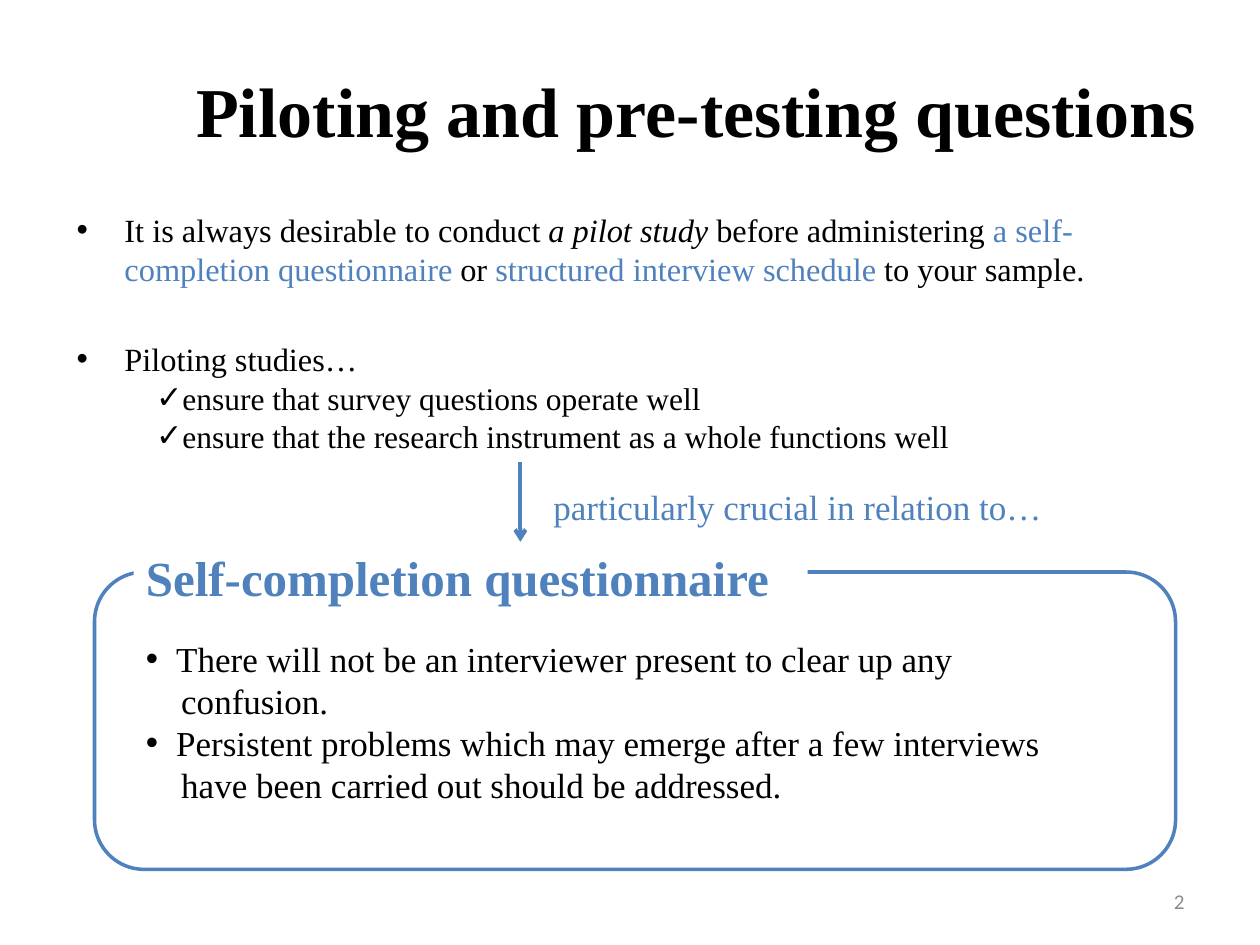
from dataclasses import dataclass

from lxml import etree
from pptx import Presentation
from pptx.dml.color import RGBColor
from pptx.enum import shapes, text
from pptx.oxml import ns
from pptx.util import Inches, Pt

BLACK, BLUE, WHITE, GREY = "000000", "4F81BD", "FFFFFF", "8C8C8C"
SERIF, SANS = "Times New Roman", "Calibri"


@dataclass
class Run:
    words: str
    size: float
    color: str = BLACK
    bold: bool = False
    italic: bool = False
    font: str = SERIF


@dataclass
class Para:
    runs: list[Run]
    bullet: str = ""
    indent: float = 0
    before: float = 0
    align: text.PP_ALIGN = text.PP_ALIGN.LEFT


@dataclass
class Box:
    left: float
    top: float
    width: float
    height: float


def rgb(color: str) -> RGBColor:
    return RGBColor.from_string(color)


def set_bullet(paragraph, para: Para) -> None:
    """Indent the paragraph and hang its bullet, if it has one."""
    props = paragraph._p.get_or_add_pPr()
    props.set("marL", str(Inches(para.indent)))
    props.set("indent", str(-Inches(para.indent) if para.bullet else 0))
    if para.bullet:
        font = etree.SubElement(props, ns.qn("a:buFont"))
        font.set("typeface", "Arial")
        etree.SubElement(props, ns.qn("a:buChar")).set("char", para.bullet)


def write(frame, paras: list[Para], anchor=text.MSO_ANCHOR.TOP) -> None:
    frame.word_wrap = True
    frame.vertical_anchor = anchor
    for index, para in enumerate(paras):
        paragraph = frame.add_paragraph() if index else frame.paragraphs[0]
        paragraph.alignment = para.align
        paragraph.space_before = Pt(para.before)
        set_bullet(paragraph, para)
        for part in para.runs:
            run = paragraph.add_run()
            run.text = part.words
            run.font.name = part.font
            run.font.size = Pt(part.size)
            run.font.bold = part.bold
            run.font.italic = part.italic
            run.font.color.rgb = rgb(part.color)


def place(box: Box) -> tuple:
    return tuple(Inches(v) for v in (box.left, box.top, box.width, box.height))


def add_text(slide, box: Box, paras: list[Para], anchor=text.MSO_ANCHOR.TOP) -> None:
    write(slide.shapes.add_textbox(*place(box)).text_frame, paras, anchor)


def add_panel(slide, kind, box: Box, fill: str = "", line: str = ""):
    panel = slide.shapes.add_shape(kind, *place(box))
    panel.shadow.inherit = False
    if fill:
        panel.fill.solid()
        panel.fill.fore_color.rgb = rgb(fill)
    else:
        panel.fill.background()
    if line:
        panel.line.color.rgb = rgb(line)
        panel.line.width = Pt(2)
    else:
        panel.line.fill.background()
    return panel


def add_down_arrow(slide, x: float, top: float, bottom: float) -> None:
    arrow = slide.shapes.add_connector(
        shapes.MSO_CONNECTOR.STRAIGHT, Inches(x), Inches(top), Inches(x), Inches(bottom))
    arrow.line.color.rgb = rgb(BLUE)
    arrow.line.width = Pt(2.25)
    etree.SubElement(arrow.line._get_or_add_ln(), ns.qn("a:tailEnd")).set("type", "arrow")
    etree.SubElement(arrow._element.spPr, ns.qn("a:effectLst"))


def main() -> None:
    deck = Presentation()
    deck.slide_width, deck.slide_height = Inches(10), Inches(7.5)
    slide = deck.slides.add_slide(deck.slide_layouts[6])

    # Title
    add_text(slide, Box(1.46, 0.36, 8.54, 1.02),
             [Para([Run("Piloting and pre-testing questions", 40, bold=True)])],
             text.MSO_ANCHOR.MIDDLE)

    # Main points
    size = 18.5
    advice = [
        Run("It is always desirable to conduct ", size),
        Run("a pilot study ", size, italic=True),
        Run("before administering ", size),
        Run("a self-completion questionnaire", size, BLUE),
        Run(" or ", size),
        Run("structured interview schedule ", size, BLUE),
        Run("to your sample.", size),
    ]
    add_text(slide, Box(0.51, 1.62, 9.06, 1.42), [
        Para(advice, "•", 0.38, before=3.7),
        Para([Run("Piloting studies…", size)], "•", 0.38, before=29),
    ])

    # What piloting ensures
    aims = ["ensure that survey questions operate well",
            "ensure that the research instrument as a whole functions well"]
    add_text(slide, Box(1.14, 2.96, 7.8, 0.71),
             [Para([Run(aim, 18)], "✓", 0.21) for aim in aims])

    # Arrow with its label
    add_down_arrow(slide, 4.13, 3.67, 4.3)
    add_text(slide, Box(4.21, 3.75, 4.17, 0.5), [Para([
        Run(" ", 24, BLUE),
        Run("particularly crucial in relation to…", 20, BLUE),
    ])])

    # Framed questionnaire section, its heading covering the frame's top edge
    add_panel(slide, shapes.MSO_SHAPE.ROUNDED_RECTANGLE,
              Box(0.75, 4.54, 8.58, 2.36), line=BLUE)
    heading = add_panel(slide, shapes.MSO_SHAPE.RECTANGLE,
                        Box(1.06, 4.3, 5.35, 0.57), fill=WHITE)
    write(heading.text_frame,
          [Para([Run("Self-completion questionnaire", 28, BLUE, bold=True)])])

    reasons = [
        ("There will not be an interviewer present to clear up any", "confusion."),
        ("Persistent problems which may emerge after a few interviews",
         "have been carried out should be addressed."),
    ]
    reason_paras = []
    for opening, rest in reasons:
        reason_paras += [Para([Run(opening, 20)], "•", 0.24),
                         Para([Run(rest, 20)], indent=0.28)]
    add_text(slide, Box(1.06, 5.01, 7.72, 1.45), reason_paras)

    # Page number
    add_text(slide, Box(7.17, 6.95, 2.33, 0.4),
             [Para([Run("2", 12, GREY, font=SANS)], align=text.PP_ALIGN.RIGHT)],
             text.MSO_ANCHOR.MIDDLE)

    deck.save("out.pptx")


if __name__ == "__main__":
    main()
